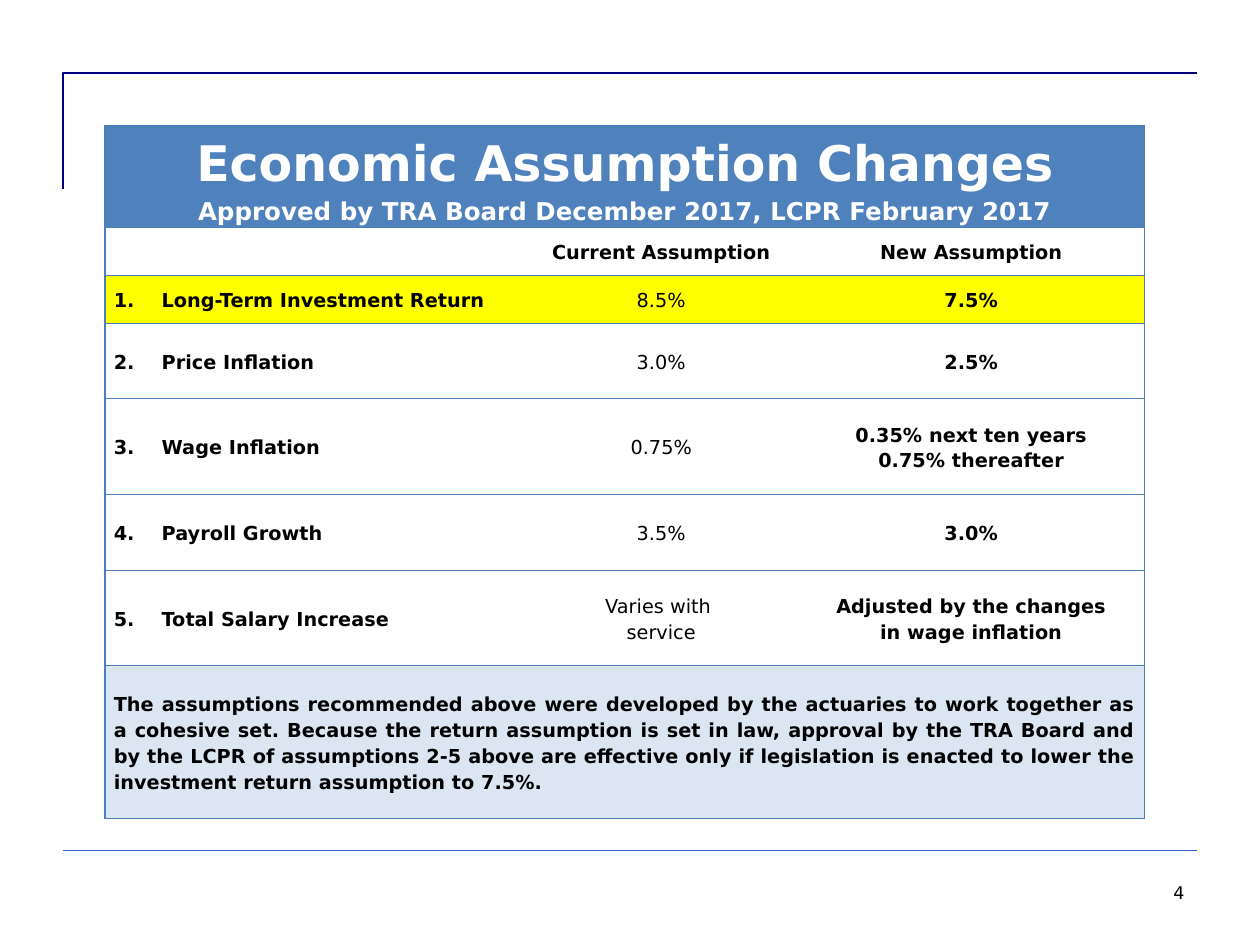
from lxml import etree
from pptx import Presentation
from pptx.dml.color import RGBColor
from pptx.enum.shapes import MSO_CONNECTOR
from pptx.enum.text import MSO_ANCHOR, PP_ALIGN
from pptx.oxml.ns import qn
from pptx.util import Inches, Pt

LEFT, CENTER, RIGHT, JUSTIFY = PP_ALIGN.LEFT, PP_ALIGN.CENTER, PP_ALIGN.RIGHT, PP_ALIGN.JUSTIFY
MIDDLE, STRAIGHT = MSO_ANCHOR.MIDDLE, MSO_CONNECTOR.STRAIGHT
FONT = "DejaVu Sans"
COLORS = {
    "frame": "000080", "footer": "3366CC", "border": "4B7EBC", "header": "4F81BD",
    "highlight": "FFFF00", "note": "DCE6F2", "text": "000000", "white": "FFFFFF",
}


def write(paragraph, text, size, bold, align, color="text", number=None):
    paragraph.text = text
    paragraph.alignment = align
    if number:
        properties = paragraph._p.get_or_add_pPr()
        properties.set("marL", str(Inches(0.38)))
        properties.set("indent", str(-Inches(0.38)))
        etree.SubElement(properties, qn("a:buAutoNum"), type="arabicPeriod", startAt=str(number))
    font = paragraph.font
    font.name, font.size, font.bold = FONT, Pt(size), bold
    font.color.rgb = RGBColor.from_string(COLORS[color])


def style_cell(cell, fill, visible_sides):
    cell.vertical_anchor = MIDDLE
    cell.margin_left = cell.margin_right = Inches(0.07)
    cell.margin_top = cell.margin_bottom = 0
    if fill:
        cell.fill.solid()
        cell.fill.fore_color.rgb = RGBColor.from_string(COLORS[fill])
    else:
        cell.fill.background()
    # Borders come before the fill in the cell properties
    for position, side in enumerate("LRTB"):
        border = etree.Element(qn(f"a:ln{side}"), w=str(Pt(0.75)))
        if side in visible_sides:
            paint = etree.SubElement(border, qn("a:solidFill"))
            etree.SubElement(paint, qn("a:srgbClr"), val=COLORS["border"])
        else:
            etree.SubElement(border, qn("a:noFill"))
        cell._tc.get_or_add_tcPr().insert(position, border)


prs = Presentation()
prs.slide_width, prs.slide_height = Inches(10), Inches(7.5)
W, H = prs.slide_width, prs.slide_height
slide = prs.slides.add_slide(prs.slide_layouts[6])
margin_left, margin_right = int(W * 0.05), int(W * 0.95)

# Corner frame
builder = slide.shapes.build_freeform(margin_left, int(H * 0.2))
builder.add_line_segments(
    [(margin_left, Inches(0.58)), (margin_right, Inches(0.58))], close=False)
frame = builder.convert_to_shape()
frame.shadow.inherit = False
frame.fill.background()
frame.line.color.rgb = RGBColor.from_string(COLORS["frame"])
frame.line.width = Pt(1.5)

# Footer rule and page number
rule = slide.shapes.add_connector(STRAIGHT, margin_left, int(H * 0.9), margin_right, int(H * 0.9))
rule.line.color.rgb = RGBColor.from_string(COLORS["footer"])
rule.line.width = Pt(0.25)
etree.SubElement(rule._element.spPr, qn("a:effectLst"))

page_width = Inches(2.33)
page_number = slide.shapes.add_textbox(
    margin_right - page_width, Inches(6.83), page_width, Inches(0.5)).text_frame
page_number.word_wrap = True
page_number.vertical_anchor = MIDDLE
write(page_number.paragraphs[0], "4", 10, False, RIGHT)

# Assumptions table
column_widths = [3.33, 2.17, 2.75]
row_heights = [0.79, 0.38, 0.38, 0.6, 0.76, 0.6, 0.76, 1.21]
title = ["Economic Assumption Changes", "Approved by TRA Board December 2017, LCPR February 2017"]
assumptions = [
    ("", "Current Assumption", "New Assumption"),
    ("Long-Term Investment Return", "8.5%", "7.5%"),
    ("Price Inflation", "3.0%", "2.5%"),
    ("Wage Inflation", "0.75%", "0.35% next ten years\n0.75% thereafter"),
    ("Payroll Growth", "3.5%", "3.0%"),
    ("Total Salary Increase", "Varies with \nservice", "Adjusted by the changes\nin wage inflation"),
]
note = (
    "The assumptions recommended above were developed by the actuaries to work together as "
    "a cohesive set. Because the return assumption is set in law, approval by the TRA Board and "
    "by the LCPR of assumptions 2-5 above are effective only if legislation is enacted to lower the "
    "investment return assumption to 7.5%."
)
last_row, last_column = len(row_heights) - 1, len(column_widths) - 1
table = slide.shapes.add_table(
    len(row_heights), len(column_widths), int(W / 12), Inches(1),
    Inches(sum(column_widths)), Inches(sum(row_heights))).table
table.first_row = table.horz_banding = False
for column, width in zip(table.columns, column_widths):
    column.width = Inches(width)
for row, height in zip(table.rows, row_heights):
    row.height = Inches(height)

# Fills and borders: horizontal rules and an outer edge
row_fills = {0: "header", 2: "highlight", last_row: "note"}
for r in range(last_row + 1):
    for c in range(last_column + 1):
        outer_sides = {0: "L", last_column: "R"}.get(c, "")
        if r in (0, last_row):
            outer_sides = "LR"
        style_cell(table.cell(r, c), row_fills.get(r), "TB" + outer_sides)
for r in (0, last_row):
    table.cell(r, 0).merge(table.cell(r, last_column))

# Title row
heading = table.cell(0, 0).text_frame
write(heading.paragraphs[0], title[0], 28, True, CENTER, "white")
write(heading.add_paragraph(), title[1], 14, True, CENTER, "white")

# Column headings and numbered assumptions
for r, entries in enumerate(assumptions, start=1):
    for c, entry in enumerate(entries):
        frame_text = table.cell(r, c).text_frame
        for i, line in enumerate(entry.split("\n")):
            paragraph = frame_text.add_paragraph() if i else frame_text.paragraphs[0]
            write(paragraph, line, 11, r == 1 or c != 1, CENTER if c else LEFT,
                  number=r - 1 if c == 0 else None)

# Closing note
write(table.cell(last_row, 0).text_frame.paragraphs[0], note, 11, True, JUSTIFY)

for row in table.rows:
    for cell in row.cells:
        for paragraph in cell.text_frame.paragraphs:
            paragraph.line_spacing = 1.15

prs.save("out.pptx")
